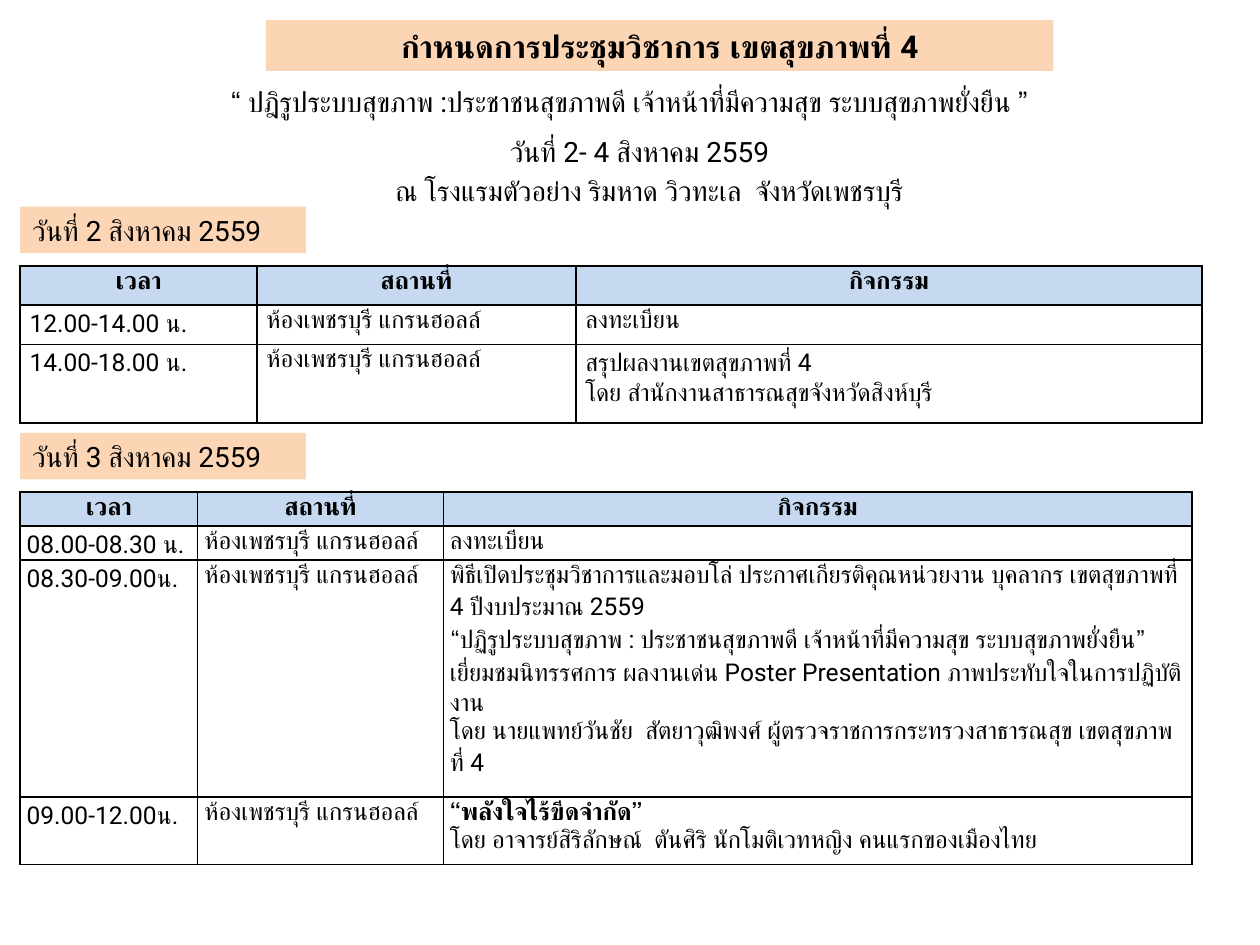
from lxml import etree
from pptx import Presentation
from pptx.dml.color import RGBColor
from pptx.enum.shapes import MSO_SHAPE
from pptx.enum.text import MSO_ANCHOR, MSO_AUTO_SIZE, PP_ALIGN
from pptx.oxml.ns import qn
from pptx.util import Pt

LEFT, CENTER = PP_ALIGN.LEFT, PP_ALIGN.CENTER
MIDDLE, TOP = MSO_ANCHOR.MIDDLE, MSO_ANCHOR.TOP
NO_FIT = MSO_AUTO_SIZE.NONE
RECTANGLE = MSO_SHAPE.RECTANGLE

FONT = "Roboto"
BLACK = RGBColor(0x00, 0x00, 0x00)
PEACH = RGBColor(0xFC, 0xD5, 0xB5)
PALE_BLUE = RGBColor(0xC6, 0xD9, 0xF1)

# Content
TITLE = "กำหนดการประชุมวิชาการ เขตสุขภาพที่ 4"
# text, left, top
SUBTITLES = [
    ("“ ปฎิรูประบบสุขภาพ :ประชาชนสุขภาพดี เจ้าหน้าที่มีความสุข ระบบสุขภาพยั่งยืน ”", 50.4, 44.6),
    ("วันที่ 2- 4 สิงหาคม 2559", 56.2, 73.4),
    ("ณ โรงแรมตัวอย่าง ริมหาด วิวทะเล  จังหวัดเพชรบุรี", 61.9, 95.8),
]
HEADINGS = ["เวลา", "สถานที่", "กิจกรรม"]
HALL = "ห้องเพชรบุรี แกรนฮอลล์"
BOLD_LINE = "“พลังใจไร้ขีดจำกัด”"
DAYS = [
    {
        "label": "วันที่ 2 สิงหาคม 2559",
        "top": 118.1,
        "columns": [135.4, 182.2, 357.8],
        "rows": [22.5, 22.5, 45],
        "inset": 5.4,
        "sessions": [
            ("12.00-14.00 น.", ["ลงทะเบียน"]),
            ("14.00-18.00 น.", [
                "สรุปผลงานเขตสุขภาพที่ 4",
                "โดย สำนักงานสาธารณสุขจังหวัดสิงห์บุรี",
            ]),
        ],
    },
    {
        "label": "วันที่ 3 สิงหาคม 2559",
        "top": 247.4,
        "columns": [101.5, 140.4, 427.7],
        "rows": [19.4, 19.4, 135.4, 38.3],
        "inset": 3.75,
        "sessions": [
            ("08.00-08.30 น.", ["ลงทะเบียน"]),
            ("08.30-09.00น.", [
                "พิธีเปิดประชุมวิชาการและมอบโล่ ประกาศเกียรติคุณหน่วยงาน บุคลากร เขตสุขภาพที่ 4 ปีงบประมาณ 2559",
                "“ปฏิรูประบบสุขภาพ : ประชาชนสุขภาพดี เจ้าหน้าที่มีความสุข ระบบสุขภาพยั่งยืน”",
                "เยี่ยมชมนิทรรศการ ผลงานเด่น Poster Presentation ภาพประทับใจในการปฏิบัติงาน",
                "โดย นายแพทย์วันชัย  สัตยาวุฒิพงศ์ ผู้ตรวจราชการกระทรวงสาธารณสุข เขตสุขภาพที่ 4",
            ]),
            ("09.00-12.00น.", [
                BOLD_LINE,
                "โดย อาจารย์สิริลักษณ์  ตันศิริ นักโมติเวทหญิง คนแรกของเมืองไทย",
            ]),
        ],
    },
]

EDGE = 11.5  # left edge of day labels and tables
LABEL_WIDTH, LINE_HEIGHT = 163.4, 26.6
LABEL_TO_TABLE = 33.8


def write(frame, lines, size, align=LEFT, bold=False, spacing=1.0):
    frame.word_wrap = True
    for number, line in enumerate(lines):
        para = frame.add_paragraph() if number else frame.paragraphs[0]
        para.text = line
        para.alignment = align
        para.line_spacing = spacing
        para.space_before = Pt(0)
        para.font.name = FONT
        para.font.size = Pt(size)
        para.font.bold = bold or line == BOLD_LINE
        para.font.color.rgb = BLACK


def fill_solid(item, color):
    item.fill.solid()
    item.fill.fore_color.rgb = color


def add_borders(cell):
    properties = cell._tc.get_or_add_tcPr()
    for position, side in enumerate(("a:lnL", "a:lnR", "a:lnT", "a:lnB")):
        line = etree.Element(qn(side), w=str(Pt(1)))
        solid = etree.SubElement(line, qn("a:solidFill"))
        etree.SubElement(solid, qn("a:srgbClr"), val=str(BLACK))
        properties.insert(position, line)


def add_day_label(page, day):
    label = page.shapes.add_shape(
        RECTANGLE, Pt(EDGE), Pt(day["top"]), Pt(LABEL_WIDTH), Pt(LINE_HEIGHT))
    label.shadow.inherit = False
    label.line.fill.background()
    fill_solid(label, PEACH)
    write(label.text_frame, [day["label"]], 16)


def add_schedule(page, day):
    columns, rows, inset = day["columns"], day["rows"], Pt(day["inset"])
    table = page.shapes.add_table(
        len(rows), len(columns), Pt(EDGE), Pt(day["top"] + LABEL_TO_TABLE),
        Pt(sum(columns)), Pt(sum(rows))).table
    table.first_row = table.horz_banding = False
    for column, width in zip(table.columns, columns):
        column.width = Pt(width)
    for row, height in zip(table.rows, rows):
        row.height = Pt(height)

    content = [[[heading] for heading in HEADINGS]]
    content += [[[time], [HALL], activity] for time, activity in day["sessions"]]
    for row_number, values in enumerate(content):
        header = row_number == 0
        for column_number, lines in enumerate(values):
            cell = table.cell(row_number, column_number)
            cell.margin_left = cell.margin_right = inset
            cell.margin_top = cell.margin_bottom = 0
            cell.vertical_anchor = TOP
            if header:
                fill_solid(cell, PALE_BLUE)
            else:
                cell.fill.background()
            add_borders(cell)
            write(cell.text_frame, lines, 14, CENTER if header else LEFT, header, 1.15)


def main():
    deck = Presentation()
    deck.slide_width, deck.slide_height = Pt(720), Pt(540)
    page = deck.slides.add_slide(deck.slide_layouts[5])

    # Title band
    title = page.shapes.title
    title.left, title.top, title.width, title.height = Pt(152), Pt(11.5), Pt(450), Pt(29)
    fill_solid(title, PEACH)
    title.text_frame.auto_size = NO_FIT
    title.text_frame.vertical_anchor = MIDDLE
    write(title.text_frame, [TITLE], 18, CENTER, True)

    # Theme, dates and venue
    for text, left, top in SUBTITLES:
        box = page.shapes.add_textbox(Pt(left), Pt(top), Pt(618.5), Pt(LINE_HEIGHT))
        write(box.text_frame, [text], 16, CENTER)

    # Daily schedules
    for day in DAYS:
        add_day_label(page, day)
        add_schedule(page, day)

    deck.save("out.pptx")


if __name__ == "__main__":
    main()
